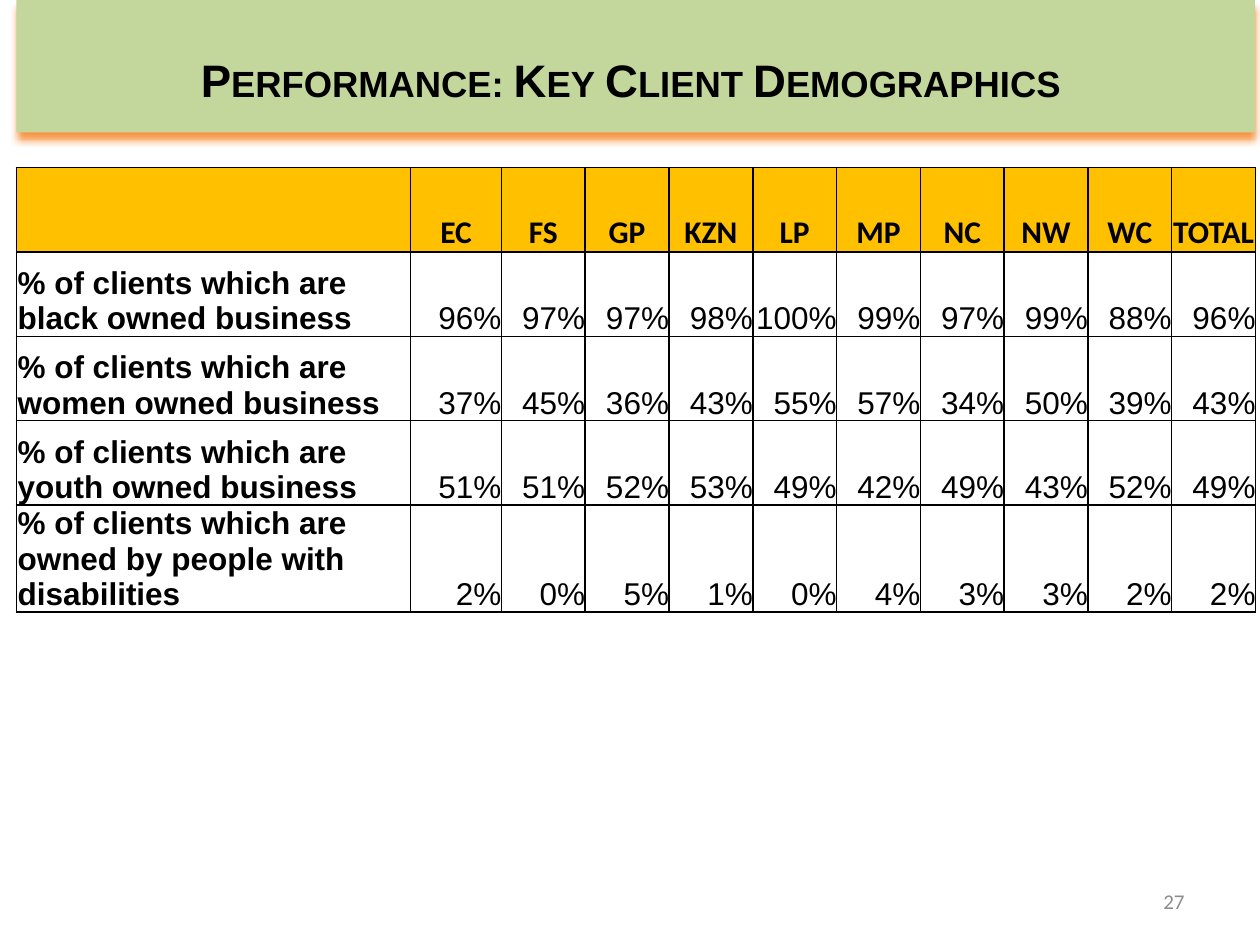
"""Build the key client demographics slide with its table by province."""
import pptx
import pptx.dml.color
import pptx.enum.text
import pptx.oxml
import pptx.oxml.ns
import pptx.util

Inches = pptx.util.Inches
Pt = pptx.util.Pt
RGBColor = pptx.dml.color.RGBColor
Align = pptx.enum.text.PP_ALIGN
Anchor = pptx.enum.text.MSO_ANCHOR

BLACK = RGBColor(0x00, 0x00, 0x00)
WHITE = RGBColor(0xFF, 0xFF, 0xFF)
GREEN = RGBColor(0xC3, 0xD6, 0x9B)
AMBER = RGBColor(0xFF, 0xC0, 0x00)
ORANGE = RGBColor(0xF7, 0x96, 0x46)
GREY = RGBColor(0x8C, 0x8C, 0x8C)

SPACE = pptx.oxml.ns.nsdecls("a")
HEADS = ["", "EC", "FS", "GP", "KZN", "LP", "MP", "NC", "NW", "WC", "TOTAL "]
GROUPS = [
    ("black owned business", [96, 97, 97, 98, 100, 99, 97, 99, 88, 96]),
    ("women owned business", [37, 45, 36, 43, 55, 57, 34, 50, 39, 43]),
    ("youth owned business", [51, 51, 52, 53, 49, 42, 49, 43, 52, 49]),
    ("owned by people with disabilities", [2, 0, 5, 1, 0, 4, 3, 3, 2, 2]),
]


def write(frame, text, size, font, color, bold, align):
    par = frame.paragraphs[0]
    par.alignment = align
    run = par.add_run()
    run.text = text
    run.font.size = Pt(size)
    run.font.name = font
    run.font.bold = bold
    run.font.color.rgb = color
    return run


def border(cell):
    props = cell._tc.get_or_add_tcPr()
    for spot, side in enumerate(["lnL", "lnR", "lnT", "lnB"]):
        line = pptx.oxml.parse_xml(
            f'<a:{side} {SPACE} w="{Pt(1)}"><a:solidFill>'
            f'<a:srgbClr val="{BLACK}"/></a:solidFill></a:{side}>'
        )
        props.insert(spot, line)


deck = pptx.Presentation()
deck.slide_width = Inches(10)
deck.slide_height = Inches(7.5)
slide = deck.slides.add_slide(deck.slide_layouts[5])

title = slide.shapes.title
title.left, title.top = Inches(0.13), Inches(0)
title.width, title.height = Inches(9.83), Inches(1.05)
title.fill.solid()
title.fill.fore_color.rgb = GREEN
title.text_frame.vertical_anchor = Anchor.MIDDLE
run = write(title.text_frame, "Performance: Key Client Demographics ",
            26, "Arial", BLACK, True, Align.CENTER)
run._r.get_or_add_rPr().set("cap", "small")
title.text_frame.paragraphs[0].line_spacing = 1.5
shadow = pptx.oxml.parse_xml(
    f'<a:effectLst {SPACE}><a:outerShdw blurRad="{Pt(4)}" dist="{Pt(4)}" '
    f'dir="5400000" rotWithShape="0"><a:srgbClr val="{ORANGE}"/>'
    f'</a:outerShdw></a:effectLst>'
)
title._element.spPr.append(shadow)

rows = [HEADS]
for group, shares in GROUPS:
    rows.append([f"% of clients which are {group}"] + [f"{share}%" for share in shares])

table = slide.shapes.add_table(
    len(rows), len(HEADS), Inches(0.13), Inches(1.33), Inches(9.83), Inches(3.35)
).table
for col, width in zip(table.columns, [3.13, 0.72] + [0.665] * 9):
    col.width = Inches(width)
for row in table.rows:
    row.height = Inches(0.67)

for r, row in enumerate(rows):
    for c, text in enumerate(row):
        cell = table.cell(r, c)
        head, label = r == 0, c == 0
        inset = Inches(0.01 if head or label else 0)
        cell.margin_left = cell.margin_right = cell.margin_top = inset
        cell.margin_bottom = Inches(0)
        cell.vertical_anchor = Anchor.BOTTOM
        cell.fill.solid()
        cell.fill.fore_color.rgb = AMBER if head else WHITE
        border(cell)
        if text:
            align = Align.CENTER if head else Align.LEFT if label else Align.RIGHT
            write(cell.text_frame, text, 18, "Calibri" if head else "Arial",
                  BLACK, head or label, align)

page = slide.shapes.add_textbox(Inches(7.17), Inches(6.95), Inches(2.33), Inches(0.4))
page.text_frame.word_wrap = True
page.text_frame.vertical_anchor = Anchor.MIDDLE
write(page.text_frame, "27", 12, "Calibri", GREY, False, Align.RIGHT)

deck.save("out.pptx")
